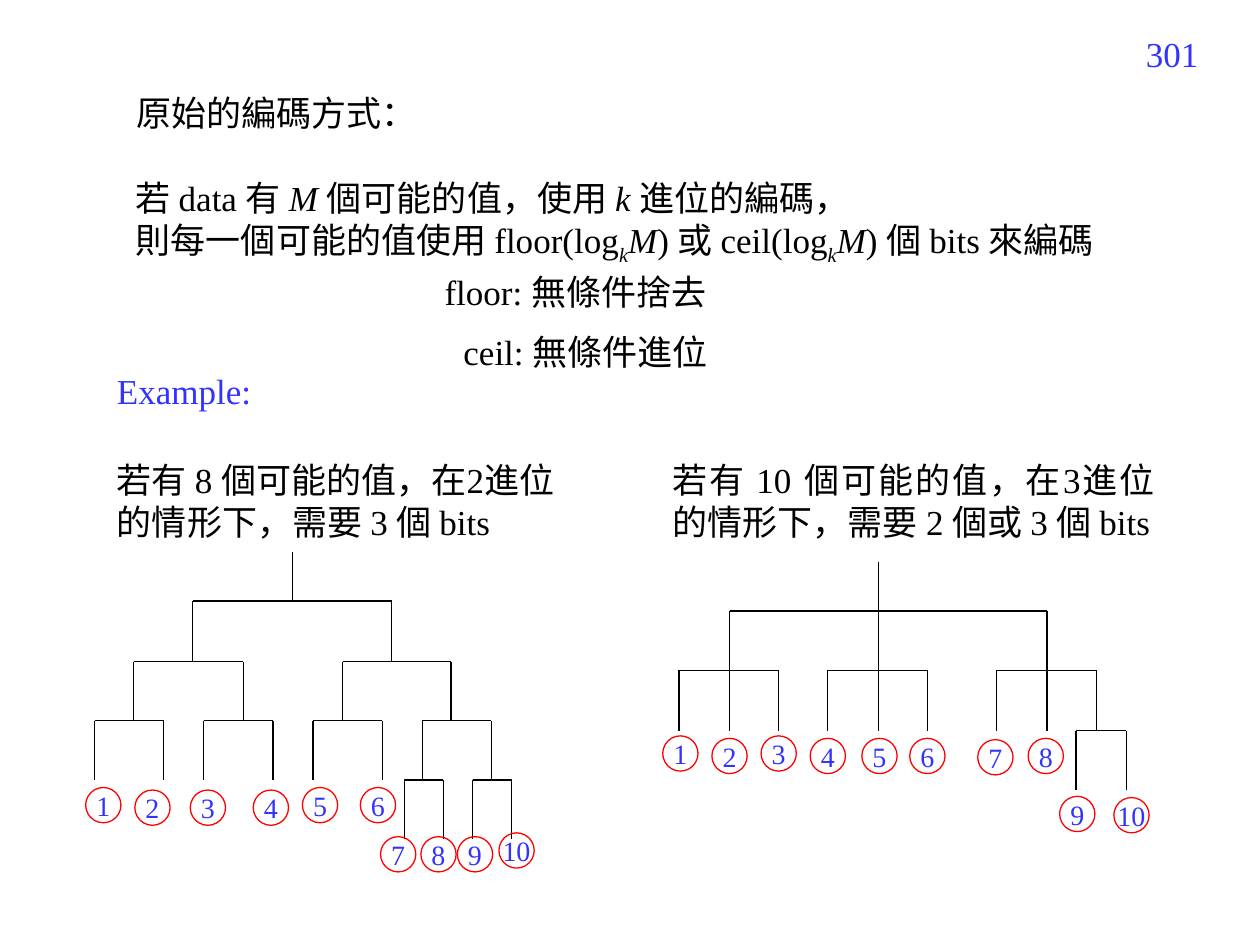
from pptx import Presentation
from pptx.dml.color import RGBColor
from pptx.enum.shapes import MSO_CONNECTOR, MSO_SHAPE
from pptx.enum.text import MSO_ANCHOR, MSO_AUTO_SIZE, PP_ALIGN
from pptx.oxml.ns import qn
from pptx.util import Inches, Pt
from lxml import etree

STRAIGHT = MSO_CONNECTOR.STRAIGHT
ELLIPSE = MSO_SHAPE.OVAL
TOP, MIDDLE = MSO_ANCHOR.TOP, MSO_ANCHOR.MIDDLE
FIT_SHAPE, NO_FIT = MSO_AUTO_SIZE.SHAPE_TO_FIT_TEXT, MSO_AUTO_SIZE.NONE
LEFT, CENTER, RIGHT, JUSTIFY = (
    PP_ALIGN.LEFT, PP_ALIGN.CENTER, PP_ALIGN.RIGHT, PP_ALIGN.JUSTIFY)

FONT = "Times New Roman"
BLACK, BLUE, RED = "000000", "3333FF", "FF0000"
CIRCLE_SIZE = 0.28

CODING_RULE = [
    [("若 data 有 ", ""), ("M ", "italic"), ("個可能的值，使用 ", ""),
     ("k ", "italic"), ("進位的編碼，", "")],
    [("則每一個可能的值使用 floor(log", ""), ("k", "subscript"), ("M", "italic"),
     (") 或 ceil(log", ""), ("k", "subscript"), ("M", "italic"),
     (") 個 bits 來編碼", "")],
]

# Each branch: x of its drops, y of its bar, y where the drops end
BINARY_BRANCHES = [
    ((1.53, 3.11), 4.77, 5.25),
    ((1.06, 1.93), 5.25, 5.72),
    ((2.72, 3.58), 5.25, 5.72),
    *[((0.75 + 0.867 * i, 1.3 + 0.867 * i), 5.72, 6.19) for i in range(4)],
    ((3.21, 3.52), 6.19, 6.66),
    ((3.75, 4.06), 6.19, 6.66),
]
TERNARY_BRANCHES = [
    ((5.79, 6.97, 8.31), 4.85, 5.8),
    ((5.39, 6.18), 5.32, 5.8),
    ((6.57, 7.36), 5.32, 5.8),
    ((7.91, 8.7), 5.32, 5.8),
    ((8.54, 8.94), 5.8, 6.27),
]

# Left and top of the circles numbered 1 to 10
BINARY_LEAVES = [
    (0.68, 6.25), (1.07, 6.27), (1.51, 6.27), (2.01, 6.27), (2.4, 6.25),
    (2.86, 6.25), (3.02, 6.64), (3.34, 6.64), (3.63, 6.64), (3.96, 6.61)]
TERNARY_LEAVES = [
    (5.26, 5.84), (5.65, 5.86), (6.04, 5.84), (6.43, 5.86), (6.84, 5.86),
    (7.22, 5.86), (7.76, 5.87), (8.16, 5.86), (8.41, 6.32), (8.84, 6.33)]


def rgb(hex_color):
    return RGBColor.from_string(hex_color)


def write_text(frame, text, size=20, color=BLACK, align=LEFT, anchor=TOP,
               fit=FIT_SHAPE, wrap=True):
    """Fill a frame with a string, or with paragraphs of (text, style) runs."""
    frame.word_wrap = wrap
    frame.auto_size = fit
    frame.vertical_anchor = anchor
    paragraphs = [[(text, "")]] if isinstance(text, str) else text
    for index, runs in enumerate(paragraphs):
        paragraph = frame.add_paragraph() if index else frame.paragraphs[0]
        paragraph.alignment = align
        for words, style in runs:
            run = paragraph.add_run()
            run.text = words
            run.font.name = FONT
            run.font.size = Pt(size)
            run.font.color.rgb = rgb(color)
            run.font.italic = style in ("italic", "subscript")
            if style == "subscript":
                run._r.get_or_add_rPr().set("baseline", "-25000")


def add_text(slide, text, left, top, width, height, **text_format):
    box = slide.shapes.add_textbox(
        Inches(left), Inches(top), Inches(width), Inches(height))
    write_text(box.text_frame, text, **text_format)


def set_title(slide, text, left, top, width, height):
    title = slide.shapes.title
    title.left, title.top = Inches(left), Inches(top)
    title.width, title.height = Inches(width), Inches(height)
    write_text(title.text_frame, text, fit=NO_FIT)


def add_line(slide, x1, y1, x2, y2):
    line = slide.shapes.add_connector(
        STRAIGHT, Inches(x1), Inches(y1), Inches(x2), Inches(y2))
    line.line.color.rgb = rgb(BLACK)
    line.line.width = Pt(0.75)
    etree.SubElement(line._element.spPr, qn("a:effectLst"))


def add_branch(slide, drops, top, bottom):
    """Draw a horizontal bar with a vertical line down at each drop."""
    add_line(slide, drops[0], top, drops[-1], top)
    for x in drops:
        add_line(slide, x, top, x, bottom)


def add_leaf(slide, number, left, top):
    circle = slide.shapes.add_shape(
        ELLIPSE, Inches(left), Inches(top), Inches(CIRCLE_SIZE), Inches(CIRCLE_SIZE))
    circle.shadow.inherit = False
    circle.fill.background()
    circle.line.color.rgb = rgb(RED)
    circle.line.width = Pt(0.75)
    frame = circle.text_frame
    frame.margin_left = frame.margin_right = 0
    frame.margin_top = frame.margin_bottom = 0
    write_text(frame, str(number), size=16, color=BLUE, align=CENTER,
               anchor=MIDDLE, fit=NO_FIT, wrap=False)


def add_tree(slide, stem_x, stem_top, branches, leaves):
    add_line(slide, stem_x, stem_top, stem_x, branches[0][1])
    for drops, top, bottom in branches:
        add_branch(slide, drops, top, bottom)
    for number, (left, top) in enumerate(leaves, start=1):
        add_leaf(slide, number, left, top)


def main():
    prs = Presentation()
    prs.slide_width, prs.slide_height = Inches(10), Inches(7.5)
    slide = prs.slides.add_slide(prs.slide_layouts.get_by_name("Title Only"))

    set_title(slide, "原始的編碼方式：", 0.98, 0.68, 8.27, 0.44)
    add_text(slide, "301", 7.28, 0.21, 2.33, 0.52, color=BLUE, align=RIGHT)
    add_text(slide, CODING_RULE, 0.98, 1.35, 8.27, 0.77)
    add_text(slide, "floor: 無條件捨去", 3.43, 2.1, 2.36, 0.44)
    add_text(slide, "ceil: 無條件進位", 3.58, 2.57, 3.31, 0.44)
    add_text(slide, "Example:", 0.83, 2.88, 2.13, 0.44, color=BLUE)

    add_text(slide, "若有 8 個可能的值，在2進位的情形下，需要 3 個 bits",
             0.83, 3.59, 3.7, 0.77)
    add_tree(slide, 2.32, 4.38, BINARY_BRANCHES, BINARY_LEAVES)

    add_text(slide, "若有 10 個可能的值，在3進位的情形下，需要 2 個或 3 個 bits",
             5.24, 3.59, 4.02, 0.77, align=JUSTIFY)
    add_tree(slide, 6.97, 4.46, TERNARY_BRANCHES, TERNARY_LEAVES)

    prs.save("out.pptx")


if __name__ == "__main__":
    main()
